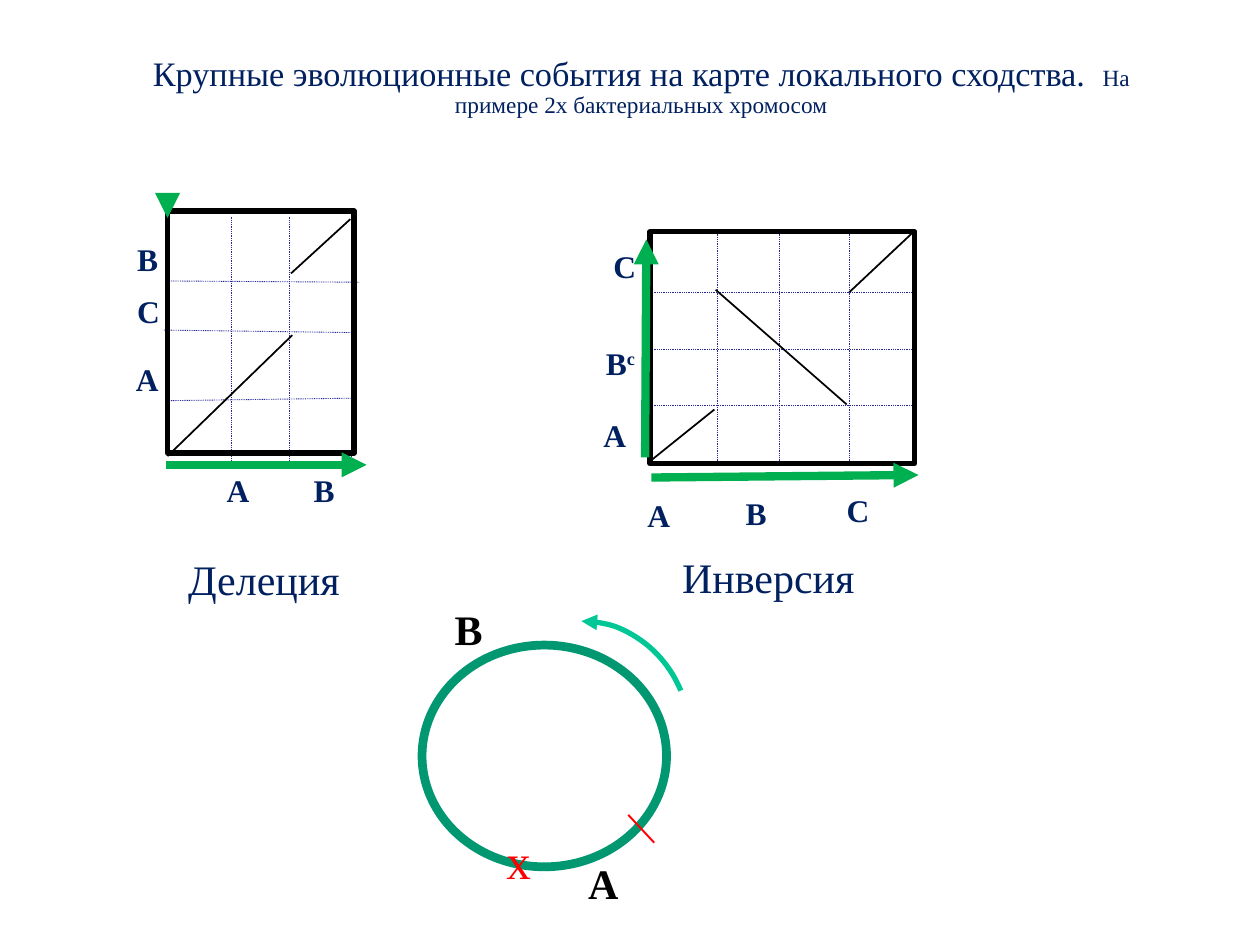
import pptx
import pptx.util
import pptx.dml.color
import pptx.enum.dml
import pptx.enum.shapes
import pptx.enum.text
import pptx.oxml.ns
import lxml.etree

# The slide is a grid of 100 columns by 75 rows; all positions count from top left
COLS, ROWS = 100, 75
PRS_W, PRS_H = pptx.util.Inches(10), pptx.util.Inches(7.5)
FONT = "Times New Roman"
COLORS = {
    "navy": "002060", "black": "000000", "grid": "262699", "arrow": "00B050",
    "ring": "009771", "turn": "00C795", "cut": "FF0000",
}
SHAPE = pptx.enum.shapes.MSO_SHAPE


def x(col):
    return round(PRS_W * col / COLS)


def y(row):
    return round(PRS_H * row / ROWS)


def rgb(name):
    return pptx.dml.color.RGBColor.from_string(COLORS[name])


def set_line(sp, color, width, dash=None, head=None, tail=None):
    sp.line.color.rgb = rgb(color)
    sp.line.width = pptx.util.Pt(width)
    if dash:
        sp.line.dash_style = dash
    ln = sp.line._get_or_add_ln()
    for tag, kind in (("a:headEnd", head), ("a:tailEnd", tail)):
        if kind:
            end = lxml.etree.SubElement(ln, pptx.oxml.ns.qn(tag))
            end.set("type", kind)


def add_text(s, text, left, top, width, height=4, size=18, color="navy",
             bold=False, wrap=True, grow=True, align=None, anchor=None,
             spacing=None, rotation=0, suffix="", suffix_size=None, raised=False):
    sp = s.shapes.add_textbox(x(left), y(top), x(width), y(height))
    sp.rotation = rotation
    tf = sp.text_frame
    tf.word_wrap = wrap
    if grow:
        tf.auto_size = pptx.enum.text.MSO_AUTO_SIZE.SHAPE_TO_FIT_TEXT
    if anchor:
        tf.vertical_anchor = anchor
    p = tf.paragraphs[0]
    p.alignment = align
    p.line_spacing = spacing
    for part, pt in ((text, size), (suffix, suffix_size or size)):
        if not part:
            continue
        r = p.add_run()
        r.text = part
        r.font.name = FONT
        r.font.size = pptx.util.Pt(pt)
        r.font.bold = bold
        r.font.color.rgb = rgb(color)
    if raised:
        r._r.get_or_add_rPr().set("baseline", "30000")
    return sp


def add_line(s, x1, y1, x2, y2, color="black", width=1, **ends):
    sp = s.shapes.add_connector(pptx.enum.shapes.MSO_CONNECTOR.STRAIGHT,
                                x(x1), y(y1), x(x2), y(y2))
    set_line(sp, color, width, **ends)
    lxml.etree.SubElement(sp._element.spPr, pptx.oxml.ns.qn("a:effectLst"))


def add_outline(s, kind, left, top, width, height, color, line_width, angles=(), **ends):
    sp = s.shapes.add_shape(kind, x(left), y(top), x(width), y(height))
    sp.shadow.inherit = False
    sp.fill.background()
    for i, angle in enumerate(angles):
        # Angles in degrees; the adjustment unit is 100000/60000 of that
        sp.adjustments[i] = angle * 0.6
    set_line(sp, color, line_width, **ends)


def add_dot_plot(s, frame, grid, matches, arrows, letters):
    for ends in grid:
        add_line(s, *ends, color="grid", width=0.5,
                 dash=pptx.enum.dml.MSO_LINE.ROUND_DOT)
    add_outline(s, SHAPE.RECTANGLE, *frame, "black", 3)
    for ends in matches:
        add_line(s, *ends)
    for ends in arrows:
        add_line(s, *ends, color="arrow", width=4.75, tail="triangle")
    for letter, left, top in letters:
        add_text(s, letter, left, top, 3.9, bold=True)


def add_deletion(s):
    add_dot_plot(
        s, frame=(13.3, 16.75, 14.8, 19.2),
        grid=[(18.35, 17.2, 18.35, 36.5), (22.95, 17.2, 22.95, 36.5),
              (27.9, 17.9, 27.9, 37.2), (13.3, 22.3, 28.5, 22.4),
              (13, 26.2, 28.2, 26.4), (13.3, 31.8, 28.2, 31.6)],
        matches=[(13.3, 36.2, 23.2, 26.6), (23.1, 21.7, 27.8, 17.4)],
        arrows=[(13.3, 16.6, 13.3, 17.3), (13.2, 36.9, 29.1, 36.9)],
        letters=[("A", 17, 36.9), ("B", 23.9, 36.9),
                 ("A", 9.8, 28.1), ("С", 9.9, 22.7), ("B", 9.9, 18.6)])
    add_text(s, "Делеция", 13.95, 43.4, 15, 5, size=24, wrap=False)


def add_inversion(s):
    left, top, width, height = frame = (51.6, 18.4, 21, 18.4)
    add_dot_plot(
        s, frame=frame,
        grid=[(col, top, col, top + height) for col in (56.95, 61.9, 67.4)]
        + [(left, row, left + width, row) for row in (23.2, 27.75, 32.15)],
        matches=[(51.6, 36.6, 56.7, 32.5), (56.8, 23, 67.2, 32.1),
                 (67.4, 23.2, 72.4, 18.5)],
        arrows=[(51.2, 36.3, 51.3, 19), (51.7, 37.9, 72.9, 37.7)],
        letters=[("A", 50.4, 38.9), ("B", 58.2, 38.7), ("C", 66.2, 38.5),
                 ("A", 46.9, 32.5), ("C", 47.7, 19.1)])
    add_text(s, "B", 47.1, 26.8, 4.5, bold=True, suffix="c", raised=True)
    add_text(s, "Инверсия", 53.15, 43.3, 16, 5, size=24, wrap=False)


def add_chromosome(s):
    for letter, left, top in (("B", 35.1, 47.4), ("A", 45.7, 67.6)):
        add_text(s, letter, left, top, 4.4, 5, size=24, color="black",
                 bold=True, wrap=False)
    add_outline(s, SHAPE.OVAL, 33.5, 51.2, 19.4, 17.6, "ring", 5)
    # Marks on the ring
    add_text(s, "x", 39.2, 65.4, 3.9, 5.7, size=28, color="cut", wrap=False)
    add_text(s, "|", 48.7, 61.5, 6.8, 5, size=24, color="cut", rotation=316.9)
    # Direction of reading
    add_outline(s, SHAPE.ARC, 37.5, 49.3, 17.3, 18.7, "turn", 3,
                angles=(270, 334.09), head="triangle")


def main():
    prs = pptx.Presentation()
    prs.slide_width, prs.slide_height = PRS_W, PRS_H
    s = prs.slides.add_slide(prs.slide_layouts[6])
    # Title
    add_text(s, "Крупные эволюционные события на карте локального сходства.  ",
             7.8, 3.75, 86.2, 6.4, size=19.6, grow=False, spacing=0.9,
             align=pptx.enum.text.PP_ALIGN.CENTER,
             anchor=pptx.enum.text.MSO_ANCHOR.MIDDLE,
             suffix="На примере 2х бактериальных хромосом", suffix_size=13.3)
    # Similarity maps
    add_inversion(s)
    add_deletion(s)
    # Ring chromosome
    add_chromosome(s)
    prs.save("out.pptx")


if __name__ == "__main__":
    main()
